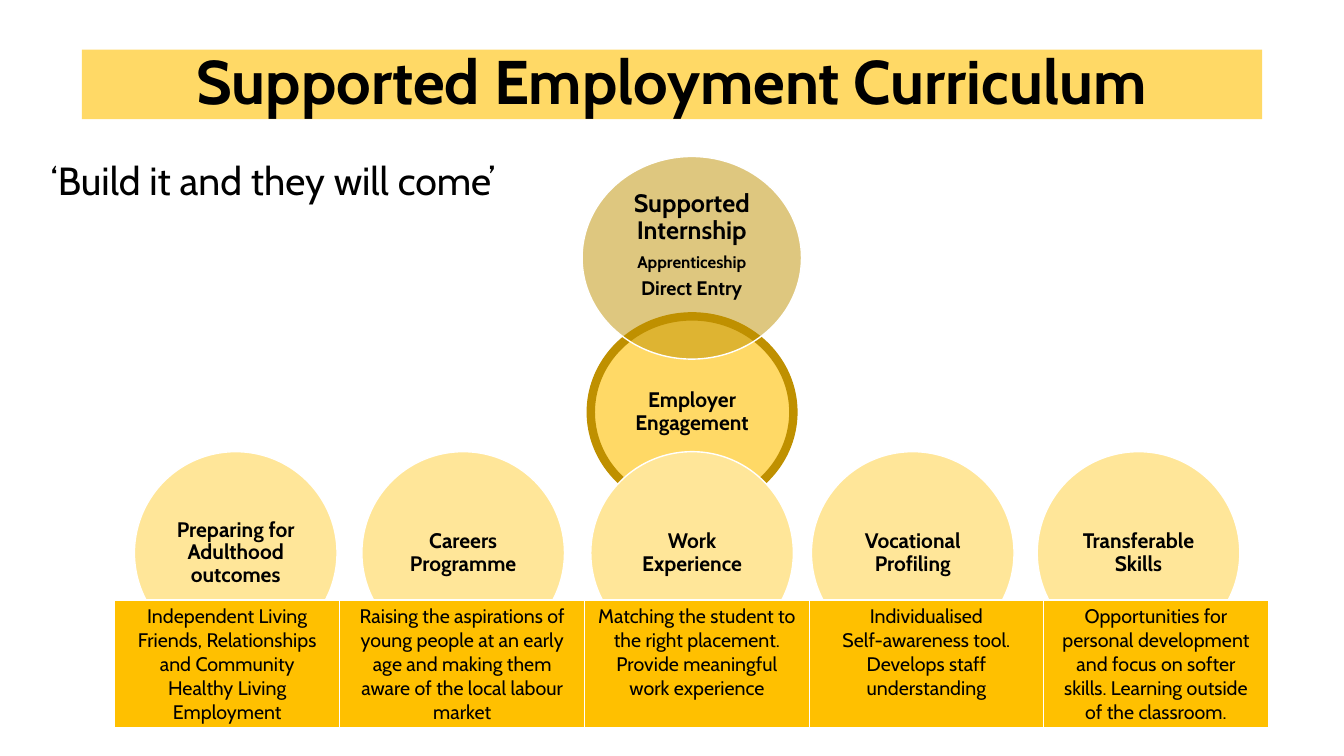
"""Build the Supported Employment Curriculum slide."""
from dataclasses import dataclass

import lxml.etree
import pptx
import pptx.dml.color
import pptx.enum.shapes
import pptx.enum.text
import pptx.oxml.ns
import pptx.util

Pt = pptx.util.Pt
Align = pptx.enum.text.PP_ALIGN
Anchor = pptx.enum.text.MSO_ANCHOR
Preset = pptx.enum.shapes.MSO_SHAPE

FONT = "Cabin"
COLOURS = {
    "text": "000000",
    "white": "FFFFFF",
    "banner": "FFD966",
    "strand": "FFE699",
    "gold": "BF9000",
    "detail": "FFC000",
}


@dataclass
class Line:
    text: str
    size: float
    bold: bool = False
    space_after: float = 0


@dataclass
class Circle:
    left: float
    top: float
    width: float
    height: float
    lines: list[Line]
    fill: str = "strand"
    outline: str = "white"
    outline_width: float = 1
    opacity: int = 100
    bottom_inset: float = 1.5


@dataclass
class Strand:
    name: str
    circle_left: float
    column_width: float
    details: list[str]


STRANDS = [
    Strand("Preparing for Adulthood outcomes", 96, 160.7,
           ["Independent Living", "Friends, Relationships and Community",
            "Healthy Living", "Employment"]),
    Strand("Careers Programme", 258.5, 175,
           ["Raising the aspirations of young people at an early age and "
            "making them aware of the local labour market"]),
    Strand("Work Experience", 422, 160.3,
           ["Matching the student to the right placement.",
            "Provide meaningful work experience"]),
    Strand("Vocational Profiling", 579.6, 167.5,
           ["Individualised", "Self-awareness tool.",
            "Develops staff understanding"]),
    Strand("Transferable Skills", 740.9, 160.5,
           ["Opportunities for personal development and focus on softer "
            "skills. Learning outside of the classroom."]),
]

ENGAGEMENT = Circle(422, 226, 144.7, 136.8, [Line("Employer Engagement", 15, True)],
                    "banner", "gold", 6)
INTERNSHIP = Circle(
    415.8, 111.8, 156.7, 144.7,
    [Line("Supported Internship", 18, True, 6.5),
     Line("Apprenticeship", 12, True, 4.5),
     Line("Direct Entry", 14, True)],
    "gold", opacity=50, bottom_inset=20)


def colour(name: str) -> pptx.dml.color.RGBColor:
    """Return the named palette colour."""
    return pptx.dml.color.RGBColor.from_string(COLOURS[name])


def write(frame, lines: list[Line], align, spacing: float | None = None) -> None:
    """Write one paragraph for each line into a text frame."""
    frame.word_wrap = True
    for index, line in enumerate(lines):
        paragraph = frame.paragraphs[0] if index == 0 else frame.add_paragraph()
        paragraph.alignment = align
        paragraph.line_spacing = spacing
        paragraph.space_after = Pt(line.space_after)
        run = paragraph.add_run()
        run.text = line.text
        run.font.name = FONT
        run.font.size = Pt(line.size)
        run.font.bold = line.bold
        run.font.color.rgb = colour("text")


def draw_circle(slide, circle: Circle) -> None:
    """Draw an ellipse with its centred label."""
    ellipse = slide.shapes.add_shape(
        Preset.OVAL, Pt(circle.left), Pt(circle.top), Pt(circle.width), Pt(circle.height))
    ellipse.shadow.inherit = False
    ellipse.fill.solid()
    ellipse.fill.fore_color.rgb = colour(circle.fill)
    if circle.opacity < 100:
        tint = ellipse.fill._xPr.find(".//" + pptx.oxml.ns.qn("a:srgbClr"))
        lxml.etree.SubElement(tint, pptx.oxml.ns.qn("a:alpha"),
                              val=str(circle.opacity * 1000))
    ellipse.line.color.rgb = colour(circle.outline)
    ellipse.line.width = Pt(circle.outline_width)
    frame = ellipse.text_frame
    frame.margin_left = frame.margin_right = Pt(8)
    frame.margin_top = Pt(1.5)
    frame.margin_bottom = Pt(circle.bottom_inset)
    frame.vertical_anchor = Anchor.MIDDLE
    write(frame, circle.lines, Align.CENTER, 0.9)


def draw_borders(cell) -> None:
    """Give a cell white borders, heavier at the bottom."""
    properties = cell._tc.get_or_add_tcPr()
    for index, (side, width) in enumerate({"L": 1, "R": 1, "T": 1, "B": 3}.items()):
        border = lxml.etree.Element(pptx.oxml.ns.qn(f"a:ln{side}"), w=str(Pt(width)))
        fill = lxml.etree.SubElement(border, pptx.oxml.ns.qn("a:solidFill"))
        lxml.etree.SubElement(fill, pptx.oxml.ns.qn("a:srgbClr"), val=COLOURS["white"])
        properties.insert(index, border)


def draw_details(slide, strands: list[Strand]) -> None:
    """Draw the table that explains each strand."""
    total = sum(strand.column_width for strand in strands)
    table = slide.shapes.add_table(
        1, len(strands), Pt(82), Pt(428.5), Pt(total), Pt(90)).table
    table.first_row = table.horz_banding = False
    table.rows[0].height = Pt(90)
    for index, strand in enumerate(strands):
        table.columns[index].width = Pt(strand.column_width)
        cell = table.cell(0, index)
        cell.fill.solid()
        cell.fill.fore_color.rgb = colour("detail")
        draw_borders(cell)
        write(cell.text_frame, [Line(text, 14) for text in strand.details], Align.CENTER)


def draw_title(slide) -> None:
    """Draw the title banner."""
    banner = slide.shapes.add_shape(Preset.RECTANGLE, Pt(58.5), Pt(35.4), Pt(843), Pt(49.7))
    banner.shadow.inherit = False
    banner.fill.solid()
    banner.fill.fore_color.rgb = colour("banner")
    banner.line.fill.background()
    banner.text_frame.vertical_anchor = Anchor.MIDDLE
    write(banner.text_frame, [Line("Supported Employment Curriculum", 44, True)],
          Align.CENTER, 0.9)


def main() -> None:
    """Assemble and save the slide."""
    deck = pptx.Presentation()
    deck.slide_width, deck.slide_height = Pt(960), Pt(540)
    slide = deck.slides.add_slide(deck.slide_layouts[6])
    draw_title(slide)
    draw_circle(slide, ENGAGEMENT)
    for strand in STRANDS:
        draw_circle(slide, Circle(strand.circle_left, 322.6, 144.7, 144.7,
                                  [Line(strand.name, 15, True)]))
    draw_circle(slide, INTERNSHIP)
    draw_details(slide, STRANDS)
    motto = slide.shapes.add_textbox(Pt(29), Pt(108), Pt(400), Pt(41))
    write(motto.text_frame, [Line("‘Build it and they will come’", 28)], Align.LEFT)
    deck.save("out.pptx")


if __name__ == "__main__":
    main()
